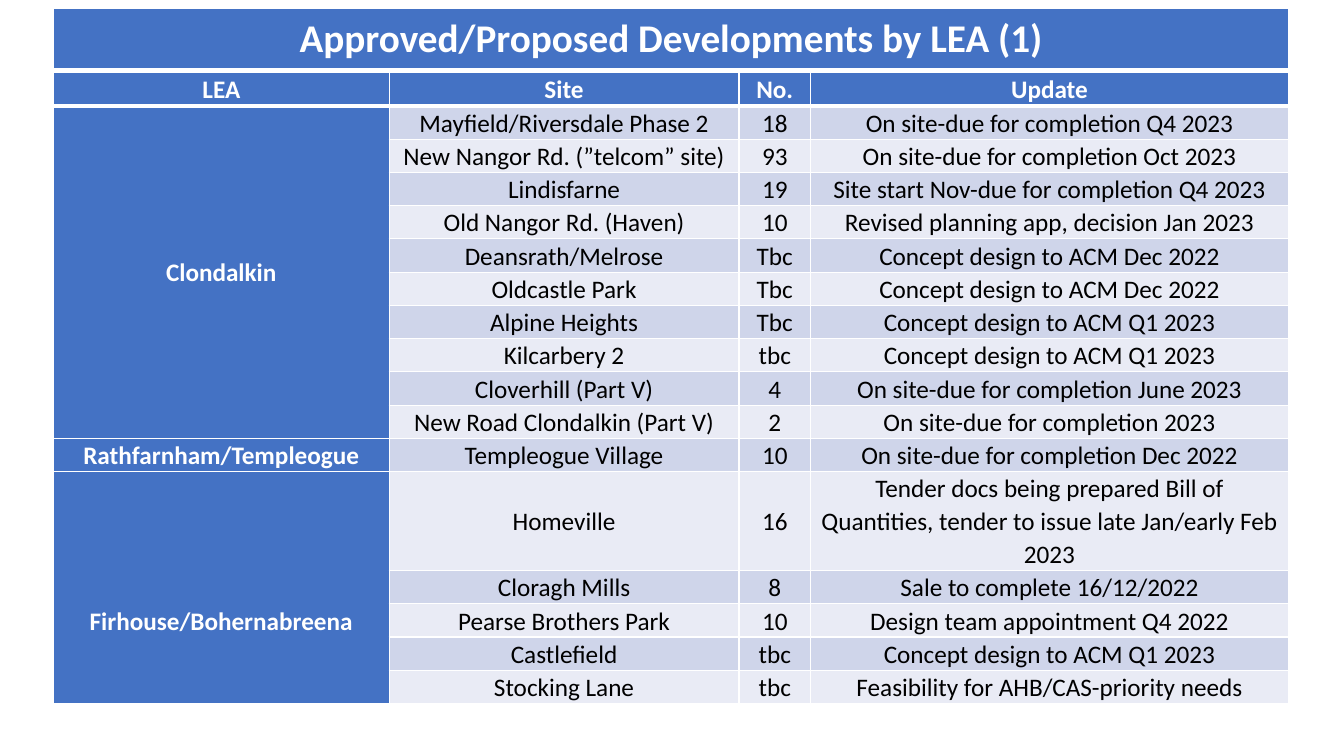
import pptx
import pptx.dml.color
import pptx.enum.text
import pptx.oxml
import pptx.oxml.ns
import pptx.util

BLUE, BANDS, WHITE, BLACK = "4472C4", ("CFD5EA", "E9EBF5"), "FFFFFF", "000000"
TITLE = "Approved/Proposed Developments by LEA (1)"
HEADINGS = ("LEA", "Site", "No.", "Update")
DEVELOPMENTS = {
    "Clondalkin": [
        ("Mayfield/Riversdale Phase 2", "18", "On site-due for completion Q4 2023"),
        ("New Nangor Rd. (”telcom” site)", "93", "On site-due for completion Oct 2023"),
        ("Lindisfarne", "19", "Site start Nov-due for completion Q4 2023"),
        ("Old Nangor Rd. (Haven)", "10", "Revised planning app, decision Jan 2023"),
        ("Deansrath/Melrose", "Tbc", "Concept design to ACM Dec 2022"),
        ("Oldcastle Park", "Tbc", "Concept design to ACM Dec 2022"),
        ("Alpine Heights", "Tbc", "Concept design to ACM Q1 2023"),
        ("Kilcarbery 2", "tbc", "Concept design to ACM Q1 2023"),
        ("Cloverhill (Part V)", "4", "On site-due for completion June 2023"),
        ("New Road Clondalkin (Part V)", "2", "On site-due for completion 2023"),
    ],
    "Rathfarnham/Templeogue": [
        ("Templeogue Village", "10", "On site-due for completion Dec 2022"),
    ],
    "Firhouse/Bohernabreena": [
        ("Homeville", "16", "Tender docs being prepared Bill of Quantities, "
                            "tender to issue late Jan/early Feb 2023"),
        ("Cloragh Mills", "8", "Sale to complete 16/12/2022"),
        ("Pearse Brothers Park", "10", "Design team appointment Q4 2022"),
        ("Castlefield", "tbc", "Concept design to ACM Q1 2023"),
        ("Stocking Lane", "tbc", "Feasibility for AHB/CAS-priority needs"),
    ],
}
COLUMN_WIDTHS = (3.33, 3.47, 0.71, 4.74)
ROW_HEIGHT, TALL_ROW_HEIGHT, TALL_SITE = 0.33, 0.98, "Homeville"
TITLE_BOX = (0.53, 0.08, 12.25, 0.61)
SCHEDULE_BOX = (0.53, 0.72, 12.25, 6.26)

HEAD_FONT = {"size": pptx.util.Pt(18), "name": "Calibri", "bold": True}
BODY_FONT = {**HEAD_FONT, "bold": False}
TITLE_FONT = {**HEAD_FONT, "size": pptx.util.Pt(28)}


def rgb(code):
    return pptx.dml.color.RGBColor.from_string(code)


def apply_format(target, values):
    for key, value in values.items():
        setattr(target, key, value)


def draw_borders(cell, top=1, bottom=1):
    """Rule the four edges in white, with widths in points."""
    properties = cell._tc.get_or_add_tcPr()
    for edge, points in (("L", 1), ("R", 1), ("T", top), ("B", bottom)):
        properties.append(pptx.oxml.parse_xml(
            f'<a:ln{edge} {pptx.oxml.ns.nsdecls("a")} w="{pptx.util.Pt(points)}">'
            f'<a:solidFill><a:srgbClr val="{WHITE}"/></a:solidFill></a:ln{edge}>'))


def paint_cell(cell, fill, top=1, bottom=1):
    draw_borders(cell, top, bottom)
    cell.fill.solid()
    cell.fill.fore_color.rgb = rgb(fill)


def write_cell(cell, text, font, colour, margins, spacing=None):
    """Write centred text; margins are (side, top, bottom) in inches."""
    side, top, bottom = map(pptx.util.Inches, margins)
    apply_format(cell, {
        "margin_left": side, "margin_right": side,
        "margin_top": top, "margin_bottom": bottom,
        "vertical_anchor": pptx.enum.text.MSO_ANCHOR.MIDDLE})
    paragraph = cell.text_frame.paragraphs[0]
    apply_format(paragraph, {
        "alignment": pptx.enum.text.PP_ALIGN.CENTER, "line_spacing": spacing})
    run = paragraph.add_run()
    run.text = text
    apply_format(run.font, font)
    run.font.color.rgb = rgb(colour)


def add_plain_table(slide, box, rows, columns):
    table = slide.shapes.add_table(rows, columns, *map(pptx.util.Inches, box)).table
    table.horz_banding = False
    return table


def add_title_band(slide, box):
    band = add_plain_table(slide, box, 1, 1).cell(0, 0)
    paint_cell(band, BLUE, bottom=3)
    write_cell(band, TITLE, TITLE_FONT, WHITE, (0.14, 0.07, 0.07))


def add_schedule(slide, box):
    """Headings, then one block of sites beside each merged LEA cell."""
    sites = [site for block in DEVELOPMENTS.values() for site in block]
    schedule = add_plain_table(slide, box, len(sites) + 1, len(HEADINGS))
    for column, width in zip(schedule.columns, COLUMN_WIDTHS):
        column.width = pptx.util.Inches(box[2] * width / sum(COLUMN_WIDTHS))

    schedule.rows[0].height = pptx.util.Inches(ROW_HEIGHT)
    for index, heading in enumerate(HEADINGS):
        cell = schedule.cell(0, index)
        paint_cell(cell, BLUE, bottom=3)
        write_cell(cell, heading, HEAD_FONT, WHITE, (0.07, 0, 0), 1.07)

    for row, site in enumerate(sites, 1):
        height = TALL_ROW_HEIGHT if site[0] == TALL_SITE else ROW_HEIGHT
        schedule.rows[row].height = pptx.util.Inches(height)
        top = 3 if row == 1 else 1
        paint_cell(schedule.cell(row, 0), BLUE, top)
        for index, text in enumerate(site, 1):
            cell = schedule.cell(row, index)
            paint_cell(cell, BANDS[(row - 1) % 2], top)
            write_cell(cell, text, BODY_FONT, BLACK, (0.07, 0, 0), 1.07)

    first = 1
    for area, block in DEVELOPMENTS.items():
        last = first + len(block) - 1
        area_cell = schedule.cell(first, 0)
        if last > first:
            area_cell.merge(schedule.cell(last, 0))
        drop = 2 * ROW_HEIGHT if block[0][0] == TALL_SITE else 0
        write_cell(area_cell, area, HEAD_FONT, WHITE, (0.07, drop, 0), 1.07)
        first = last + 1


def main():
    deck = pptx.Presentation()
    deck.slide_width = pptx.util.Inches(13.33)
    deck.slide_height = pptx.util.Inches(7.5)
    slide = deck.slides.add_slide(deck.slide_layouts[6])
    add_schedule(slide, SCHEDULE_BOX)
    add_title_band(slide, TITLE_BOX)
    deck.save("out.pptx")


if __name__ == "__main__":
    main()
